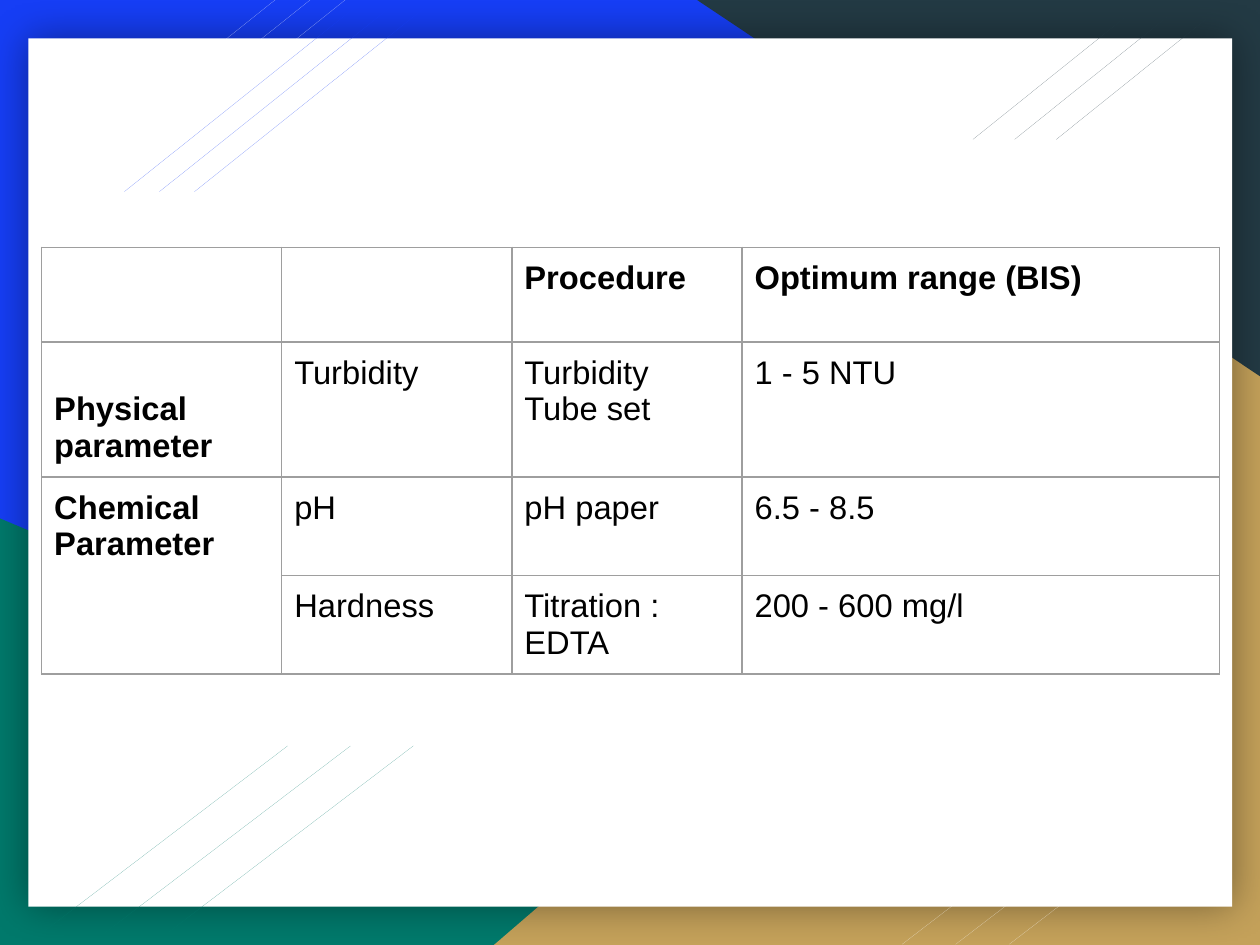
from dataclasses import dataclass

from lxml.etree import SubElement
from pptx import Presentation
from pptx.dml.color import RGBColor
from pptx.enum.shapes import MSO_SHAPE
from pptx.enum.text import MSO_ANCHOR
from pptx.oxml.ns import qn
from pptx.util import Cm, Pt


@dataclass(frozen=True)
class Theme:
    blue: str = "163EF5"
    green: str = "00796B"
    gold: str = "C4A15A"
    slate: str = "233A44"
    white: str = "FFFFFF"
    black: str = "000000"
    rule: str = "9E9E9E"
    font: str = "Arial"
    size: float = 14
    border: float = 0.75


THEME = Theme()
WIDTH, HEIGHT = 19.05, 14.29

ROWS = [
    ["", "", "Procedure", "Optimum range (BIS)"],
    ["Physical parameter", "Turbidity", "Turbidity Tube set", "1 - 5 NTU"],
    ["Chemical Parameter", "pH", "pH paper", "6.5 - 8.5"],
    ["", "Hardness", "Titration : EDTA", "200 - 600 mg/l"],
]
COLUMN_SHARES = [3.63, 3.48, 3.48, 7.22]
ROW_SHARES = [1.43, 2.04, 1.49, 1.49]


def add_block(slide, kind, box, color):
    """Add a flat shape without outline or shadow."""
    shape = slide.shapes.add_shape(kind, *map(Cm, box))
    shape.shadow.inherit = False
    shape.fill.solid()
    shape.fill.fore_color.rgb = RGBColor.from_string(color)
    shape.line.fill.background()
    return shape


def draw_backdrop(slide, box):
    """Colour the background and fill three corners of the box."""
    left, top, width, height = box
    fill = slide.background.fill
    fill.solid()
    fill.fore_color.rgb = RGBColor.from_string(THEME.blue)

    def corner(w, h, color, at_right=False, at_top=False):
        x = left + width - w if at_right else left
        y = top if at_top else top + height - h
        return add_block(slide, MSO_SHAPE.RIGHT_TRIANGLE, (x, y, w, h), color)

    corner(15.36, 6.45, THEME.green)
    gold = corner(11.58, 9.98, THEME.gold, at_right=True)
    gold._element.spPr.get_or_add_xfrm().set("flipH", "1")
    corner(8.51, 5.69, THEME.slate, at_right=True, at_top=True).rotation = 180


def draw_panel(slide, box):
    """Add the white panel with a soft shadow all round."""
    panel = add_block(slide, MSO_SHAPE.RECTANGLE, box, THEME.white)
    effects = panel._element.spPr.find(qn("a:effectLst"))
    shadow = SubElement(effects, qn("a:outerShdw"), blurRad=str(Pt(18)),
                        dist="0", dir="0", algn="ctr", rotWithShape="0")
    color = SubElement(shadow, qn("a:srgbClr"), val=THEME.black)
    SubElement(color, qn("a:alpha"), val="40000")


def draw_stripes(slide, box, step, color):
    """Add three hairline slants, the leftmost in the box, on top last."""
    left, top, width, height = box
    for i in reversed(range(3)):
        stripe = add_block(slide, MSO_SHAPE.PARALLELOGRAM,
                           (left + i * step, top, width, height), color)
        stripe.adjustments[0] = 1.58


def set_borders(cell):
    props = cell._tc.get_or_add_tcPr()
    for side in ("lnL", "lnR", "lnT", "lnB"):
        line = SubElement(props, qn(f"a:{side}"), w=str(Pt(THEME.border)))
        fill = SubElement(line, qn("a:solidFill"))
        SubElement(fill, qn("a:srgbClr"), val=THEME.rule)


def fill_cell(cell, text, bold):
    set_borders(cell)
    cell.fill.background()
    cell.margin_left = cell.margin_right = Cm(0.19)
    cell.margin_top = cell.margin_bottom = Cm(0.19)
    cell.text = text
    font = cell.text_frame.paragraphs[0].font
    font.name, font.size, font.bold = THEME.font, Pt(THEME.size), bold
    font.color.rgb = RGBColor.from_string(THEME.black)


def draw_table(slide, box):
    width, height = box[2:]
    frame = slide.shapes.add_table(len(ROWS), len(COLUMN_SHARES),
                                   *map(Cm, box))
    table = frame.table
    table.first_row = table.horz_banding = False
    for column, share in zip(table.columns, COLUMN_SHARES):
        column.width = Cm(width * share / sum(COLUMN_SHARES))
    for row, share in zip(table.rows, ROW_SHARES):
        row.height = Cm(height * share / sum(ROW_SHARES))
    for r, texts in enumerate(ROWS):
        for c, text in enumerate(texts):
            fill_cell(table.cell(r, c), text, bold=r == 0 or c == 0)
    table.cell(1, 0).vertical_anchor = MSO_ANCHOR.BOTTOM
    table.cell(2, 0).merge(table.cell(3, 0))


def main():
    deck = Presentation()
    deck.slide_width, deck.slide_height = Cm(WIDTH), Cm(HEIGHT)
    slide = deck.slides.add_slide(deck.slide_layouts[6])

    draw_backdrop(slide, (0, 0, WIDTH, HEIGHT))
    draw_panel(slide, (0.43, 0.58, 18.2, 13.13))
    draw_stripes(slide, (0.53, 0, 3.63, 2.9), 0.53, THEME.white)
    draw_stripes(slide, (1.88, 0, 3.63, 2.9), 0.53, THEME.blue)
    draw_stripes(slide, (14.71, 0.03, 2.59, 2.08), 0.63, THEME.slate)
    draw_stripes(slide, (13.64, 11.71, 3.35, 2.57), 0.81, THEME.white)
    draw_stripes(slide, (0.41, 11.28, 3.94, 3), 0.95, THEME.green)
    draw_table(slide, (0.63, 3.74, 17.81, 6.45))

    deck.save("out.pptx")


if __name__ == "__main__":
    main()
